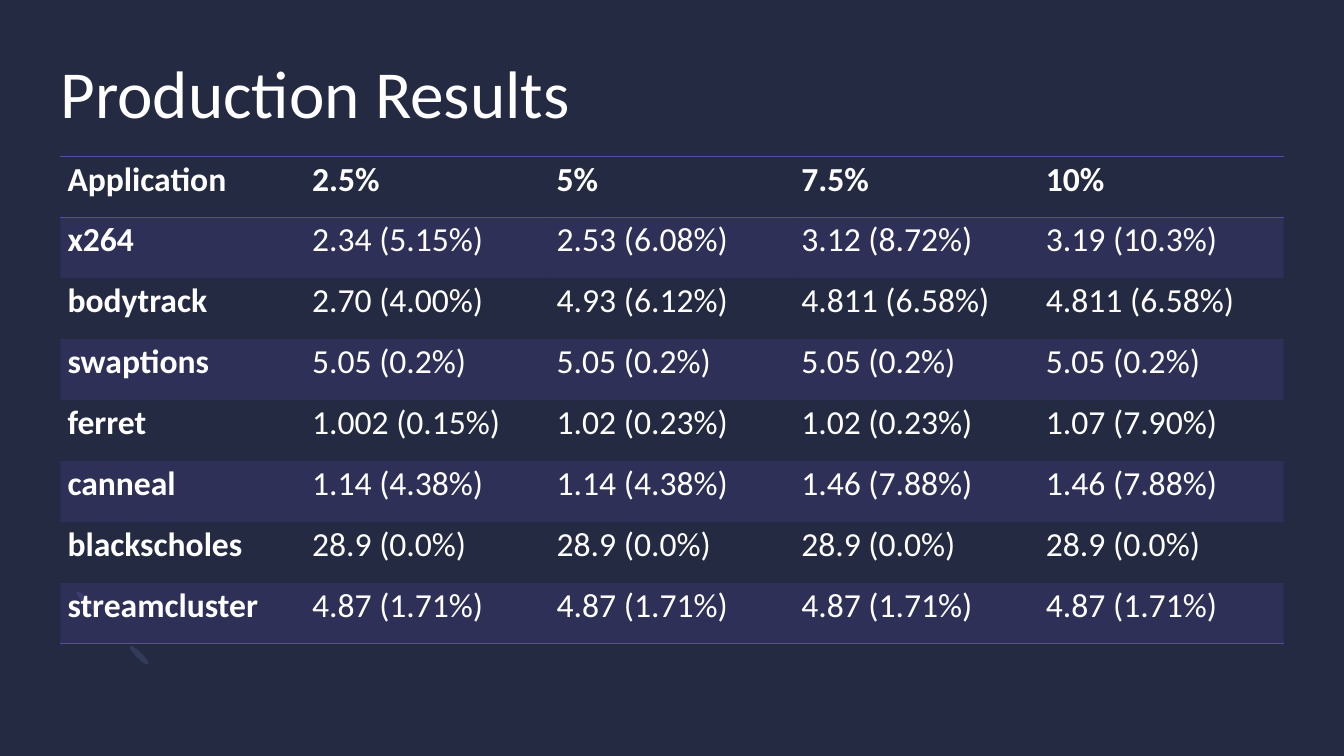
from dataclasses import dataclass

from lxml.etree import SubElement as Sub
from pptx import Presentation
from pptx.dml.color import RGBColor as RGB
from pptx.enum.shapes import MSO_SHAPE as Shape
from pptx.enum.text import MSO_ANCHOR as Anchor, MSO_AUTO_SIZE as Auto, PP_ALIGN as Align
from pptx.oxml.ns import qn
from pptx.util import Inches, Pt


@dataclass(frozen=True)
class Theme:
    back: RGB = RGB.from_string("242A41")
    ink: RGB = RGB.from_string("FFFFFF")
    band: RGB = RGB.from_string("5948B7")
    dot: RGB = RGB.from_string("333B5B")
    arc: RGB = RGB.from_string("7B88B6")
    font: str = "Calibri"
    head: int = 48
    body: int = 24


THEME = Theme()
PLAIN = "{2D5ABB26-0587-4C30-8999-92F81FD0307C}"  # table style without grid
ROWS = [
    ("Application", "2.5%", "5%", "7.5%", "10%"),
    ("x264", "2.34 (5.15%)", "2.53 (6.08%)", "3.12 (8.72%)", "3.19 (10.3%)"),
    ("bodytrack", "2.70 (4.00%)", "4.93 (6.12%)", "4.811 (6.58%)", "4.811 (6.58%)"),
    ("swaptions",) + ("5.05 (0.2%)",) * 4,
    ("ferret", "1.002 (0.15%)", "1.02 (0.23%)", "1.02 (0.23%)", "1.07 (7.90%)"),
    ("canneal", "1.14 (4.38%)", "1.14 (4.38%)", "1.46 (7.88%)", "1.46 (7.88%)"),
    ("blackscholes",) + ("28.9 (0.0%)",) * 4,
    ("streamcluster",) + ("4.87 (1.71%)",) * 4,
]


def paint(fill, color, alpha=100):
    fill.solid()
    fill.fore_color.rgb = color
    if alpha < 100:
        node = fill._xPr.find(qn("a:solidFill"))[0]
        Sub(node, qn("a:alpha"), val=str(alpha * 1000))


def write(frame, text, size, space, bold=False):
    para = frame.paragraphs[0]
    para.alignment = Align.LEFT
    para.line_spacing = space
    run = para.add_run()
    run.text = text
    font = run.font
    font.name, font.size, font.bold = THEME.font, Pt(size), bold
    font.color.rgb = THEME.ink


def rule(cell, side):
    line = Sub(cell._tc.get_or_add_tcPr(), qn("a:" + side), w=str(Pt(1)))
    Sub(Sub(line, qn("a:solidFill")), qn("a:srgbClr"), val=str(THEME.band))


def curve(a, b, c, d, steps=12):
    """Points along a cubic curve, without its start."""
    for i in range(1, steps + 1):
        t = i / steps
        u = 1 - t
        yield tuple(u**3 * p + 3 * u * u * t * q + 3 * u * t * t * r + t**3 * s
                    for p, q, r, s in zip(a, b, c, d))


# Faint ring with two round ends
def add_ring(slide, x, y):
    for dx, dy in ((0.77, 0.55), (0.24, 0.01)):
        dot = slide.shapes.add_shape(Shape.OVAL, Inches(x + dx), Inches(y + dy),
                                     Inches(0.06), Inches(0.26))
        dot.rotation = 135
        dot.shadow.inherit = False
        paint(dot.fill, THEME.dot)
        dot.line.fill.background()

    start, inner = (0.18, 0.77), (0.41, 0.18)
    pts = [*curve(start, (-0.02, 0.57), (0, 0.23), (0.23, 0)),
           inner,
           *curve(inner, (0.29, 0.29), (0.28, 0.47), (0.38, 0.56)),
           *curve((0.38, 0.56), (0.48, 0.66), (0.65, 0.65), (0.77, 0.54)),
           (0.94, 0.72),
           *curve((0.94, 0.72), (0.72, 0.94), (0.37, 0.97), start)]
    path = slide.shapes.build_freeform(*start, scale=Inches(1))
    path.add_line_segments(pts, close=True)
    arc = path.convert_to_shape(Inches(x), Inches(y))
    arc.shadow.inherit = False
    paint(arc.fill, THEME.arc, 2)
    arc.line.fill.background()


# Heading
def add_title(slide, x, y, w, h):
    title = slide.shapes.title
    title.left, title.top, title.width, title.height = map(Inches, (x, y, w, h))
    frame = title.text_frame
    frame.margin_left = frame.margin_right = frame.margin_top = frame.margin_bottom = 0
    frame.vertical_anchor = Anchor.TOP
    frame.auto_size = Auto.NONE
    frame.word_wrap = True
    write(frame, "Production Results", THEME.head, 0.9)


# Table of results
def add_grid(slide, x, y, w, h):
    frame = slide.shapes.add_table(len(ROWS), len(ROWS[0]), *map(Inches, (x, y, w, h)))
    for style in frame.element.iter(qn("a:tableStyleId")):
        style.text = PLAIN
    grid = frame.table
    last = len(ROWS) - 1
    for i, row in enumerate(ROWS):
        for j, text in enumerate(row):
            cell = grid.cell(i, j)
            cell.margin_left = cell.margin_right = Inches(0.07)
            cell.margin_top = cell.margin_bottom = 0
            cell.vertical_anchor = Anchor.TOP
            write(cell.text_frame, text, THEME.body, 1.07, i == 0 or j == 0)
            if i == 0:
                rule(cell, "lnT")
            if i in (0, last):
                rule(cell, "lnB")
            if i % 2:
                paint(cell.fill, THEME.band, 20)
            else:
                cell.fill.background()


def main():
    deck = Presentation()
    deck.slide_width, deck.slide_height = Inches(13.33), Inches(7.5)
    slide = deck.slides.add_slide(deck.slide_layouts[5])
    paint(slide.background.fill, THEME.back)
    add_ring(slide, 0.58, 5.82)
    add_title(slide, 0.6, 0.6, 12.13, 1.46)
    add_grid(slide, 0.6, 1.55, 12.13, 4.84)
    deck.save("out.pptx")


if __name__ == "__main__":
    main()
